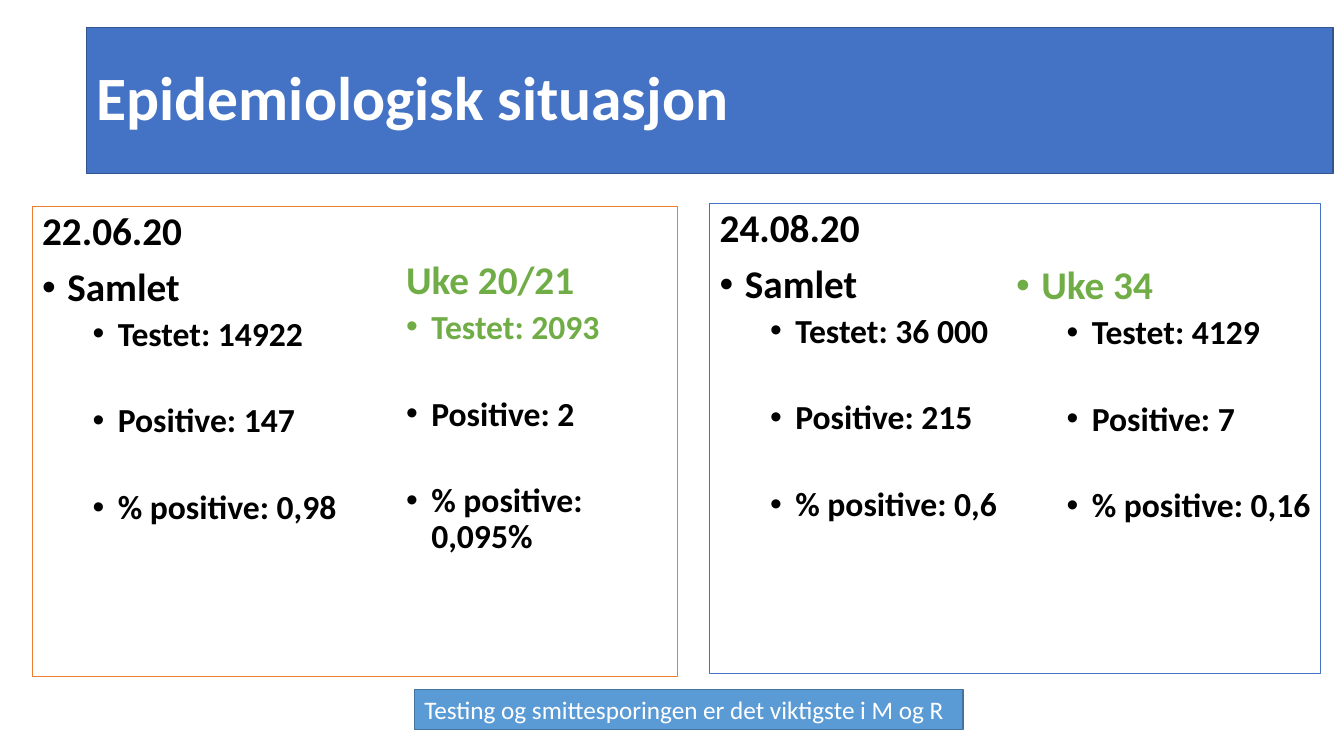
from lxml.etree import SubElement
from pptx import Presentation
from pptx.dml.color import RGBColor
from pptx.enum.shapes import MSO_SHAPE as Shape
from pptx.enum.text import MSO_ANCHOR as Anchor, MSO_AUTO_SIZE as Fit, PP_ALIGN as Align
from pptx.oxml.ns import qn
from pptx.util import Inches, Pt

WHITE = RGBColor(0xFF, 0xFF, 0xFF)
BLACK = RGBColor(0, 0, 0)
BLUE = RGBColor(0x44, 0x72, 0xC4)
NAVY = RGBColor(0x32, 0x54, 0x91)
ORANGE = RGBColor(0xED, 0x7D, 0x31)
GREEN = RGBColor(0x70, 0xAD, 0x47)
SKY = RGBColor(0x5B, 0x9B, 0xD5)
STEEL = RGBColor(0x43, 0x73, 0x9E)


class Deck:
    """Holds the style and the current slide, and adds each kind of element."""

    font = "Calibri"

    def __init__(self):
        self.prs = Presentation()
        self.prs.slide_width = Inches(13.33)
        self.prs.slide_height = Inches(7.5)
        self.slide = self.prs.slides.add_slide(self.prs.slide_layouts[5])

    def paint(self, shape, fill, line):
        shape.fill.solid()
        shape.fill.fore_color.rgb = fill
        shape.line.color.rgb = line
        shape.line.width = Pt(1)

    def frame(self, shape, anchor=Anchor.TOP):
        frame = shape.text_frame
        look = {"word_wrap": True, "auto_size": Fit.NONE, "vertical_anchor": anchor}
        for name, value in look.items():
            setattr(frame, name, value)
        return frame

    def label(self, para, text, size, color=BLACK, bold=True, before=0, line=0.9, indent=None):
        look = {"alignment": Align.LEFT, "line_spacing": line, "space_before": Pt(before)}
        for name, value in look.items():
            setattr(para, name, value)
        run = para.add_run()
        run.text = text
        for name, value in {"name": self.font, "size": Pt(size), "bold": bold}.items():
            setattr(run.font, name, value)
        run.font.color.rgb = color
        if indent:
            props = para._p.get_or_add_pPr()
            props.set("marL", str(Inches(indent)))
            props.set("indent", str(Inches(-0.25)))
            SubElement(props, qn("a:buFont")).set("typeface", "Arial")
            SubElement(props, qn("a:buChar")).set("char", "•")

    def title(self, text, box):
        shape = self.slide.shapes.title
        shape.left, shape.top, shape.width, shape.height = map(Inches, box)
        self.paint(shape, BLUE, NAVY)
        self.label(self.frame(shape, Anchor.MIDDLE).paragraphs[0], text, 44, WHITE)

    def panel(self, box, fill, line):
        shape = self.slide.shapes.add_shape(Shape.RECTANGLE, *map(Inches, box))
        shape.shadow.inherit = False
        self.paint(shape, fill, line)
        return self.frame(shape)

    def column(self, box):
        frame = self.frame(self.slide.shapes.add_textbox(*map(Inches, box)))
        frame.margin_right = 0
        return frame

    def counts(self, frame, rows, indent, tints=(BLACK,) * 3):
        for row, tint, gap in zip(rows, tints, (5, 36, 36)):
            self.label(frame.add_paragraph(), row, 24, tint, before=gap, indent=indent)


def main():
    deck = Deck()
    deck.title("Epidemiologisk situasjon", (0.86, 0.27, 12.36, 1.45))

    sides = [
        ((0.32, 2.05, 6.4, 4.66), ORANGE, "22.06.20",
         ("Testet: 14922", "Positive: 147", "% positive: 0,98"),
         (3.93, 2.54, 2.7, 3.4), "Uke 20/21", None, 0.25, (GREEN, BLACK, BLACK),
         ("Testet: 2093", "Positive: 2", "% positive: 0,095%")),
        ((7.04, 2.02, 6.06, 4.66), BLUE, "24.08.20",
         ("Testet: 36 000", "Positive: 215", "% positive: 0,6"),
         (9.98, 2.59, 3.12, 3.4), "Uke 34", 0.25, 0.75, (BLACK,) * 3,
         ("Testet: 4129", "Positive: 7", "% positive: 0,16")),
    ]
    for box, edge, date, total, place, week, lead, indent, tints, rows in sides:
        left = deck.panel(box, WHITE, edge)
        deck.label(left.paragraphs[0], date, 28)
        deck.label(left.add_paragraph(), "Samlet", 28, before=10, indent=0.25)
        deck.counts(left, total, 0.75)
        right = deck.column(place)
        deck.label(right.paragraphs[0], week, 28, GREEN, indent=lead)
        deck.counts(right, rows, indent, tints)

    note = deck.panel((4.11, 6.84, 5.44, 0.4), SKY, STEEL)
    deck.label(note.paragraphs[0], "Testing og smittesporingen er det viktigste i M og R",
               18, WHITE, bold=False, line=1.0)
    deck.prs.save("out.pptx")


if __name__ == "__main__":
    main()
